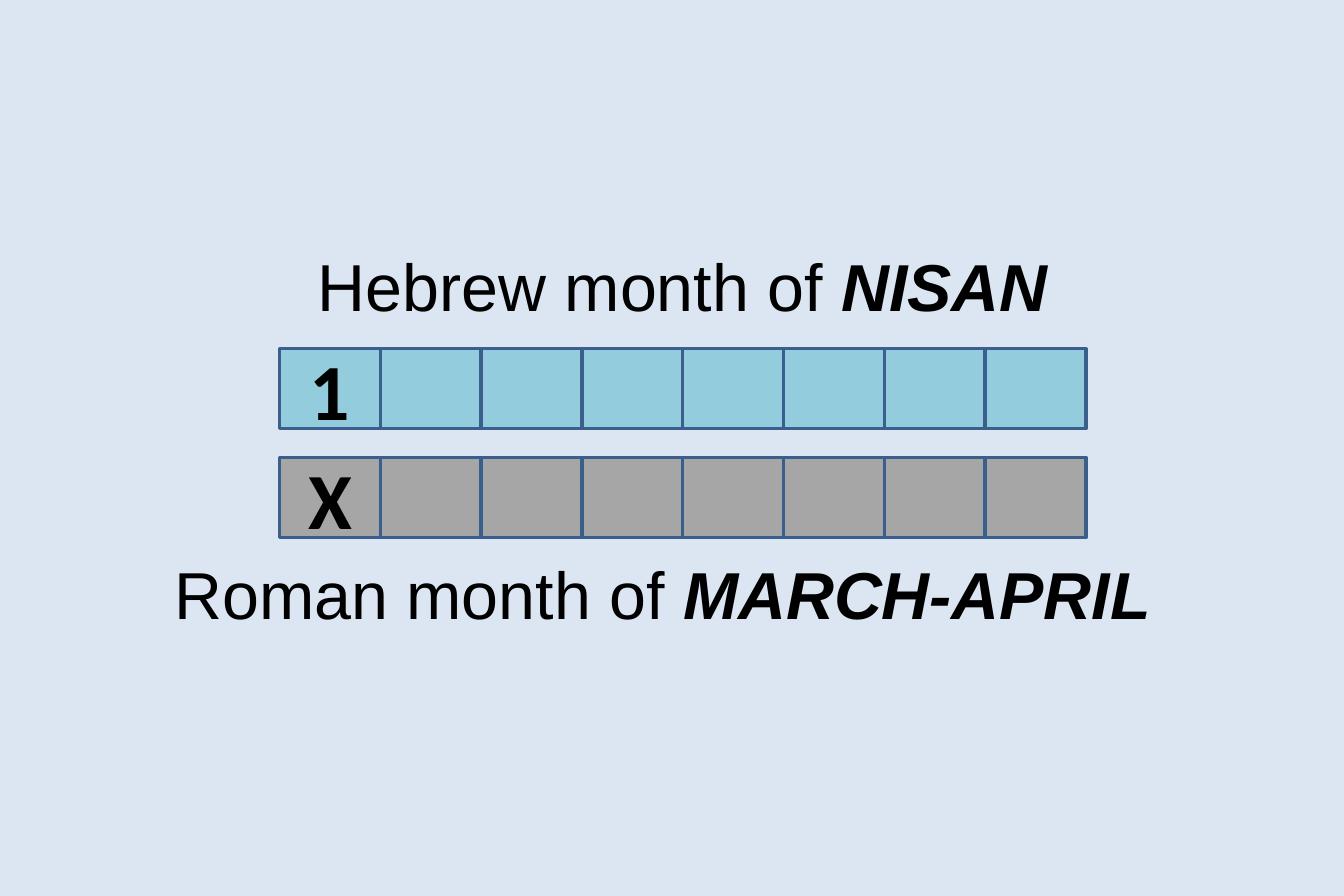
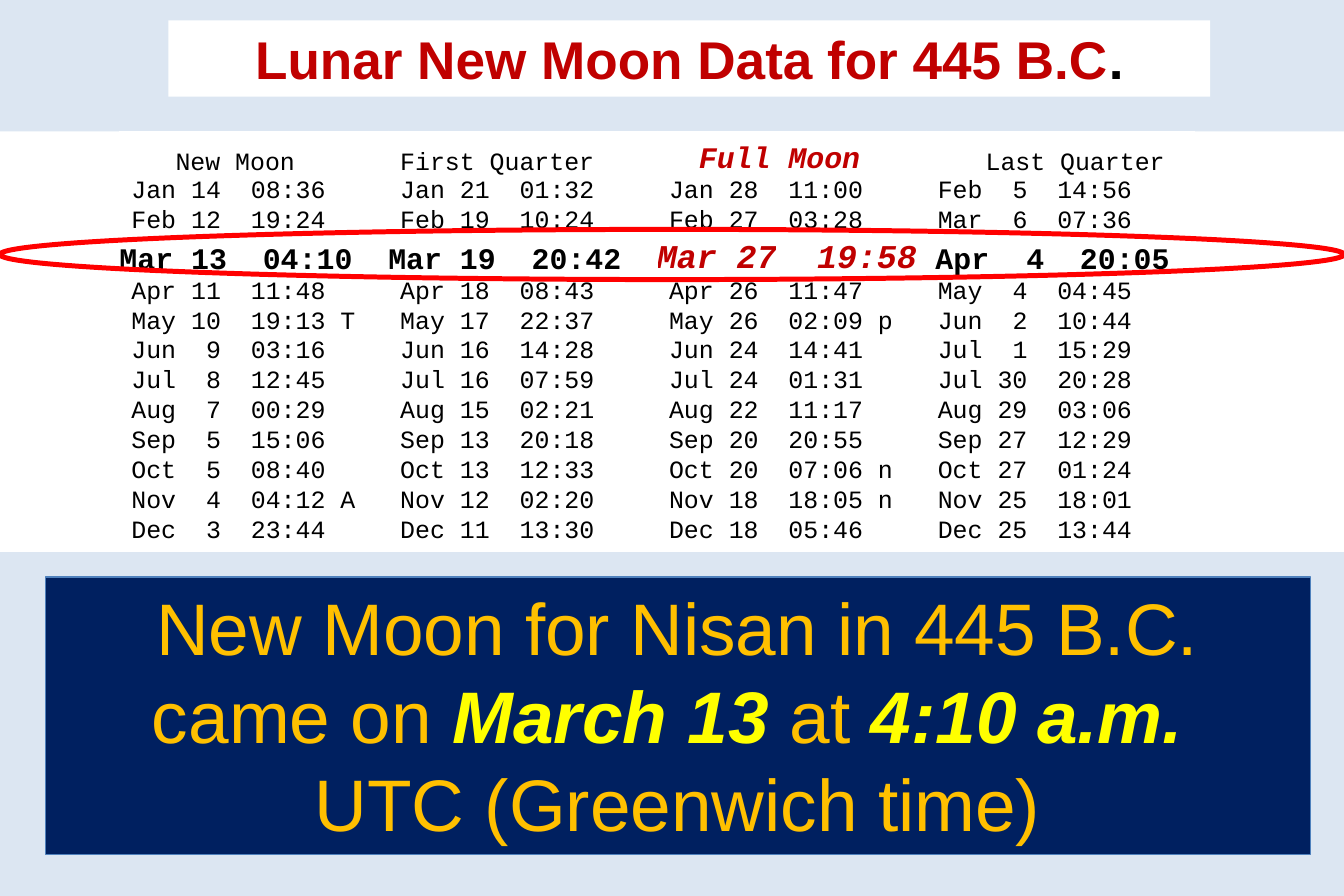
import pptx
import pptx.dml.color
import pptx.enum.shapes
import pptx.enum.text
import pptx.util

Inches = pptx.util.Inches
Pt = pptx.util.Pt
ALIGN = pptx.enum.text.PP_ALIGN
ANCHOR = pptx.enum.text.MSO_ANCHOR
SHAPE = pptx.enum.shapes.MSO_SHAPE

COLORS = {
    "background": "DCE6F2", "white": "FFFFFF", "black": "000000",
    "hebrew": "93CDDD", "roman": "A6A6A6", "day_line": "3A5F8C",
    "dark_red": "C00000", "red": "FF0000", "navy": "002060",
    "banner_line": "4F81BD", "gold": "FFC000", "yellow": "FFFF00",
}

# Run styles: size, font, colour, bold, italic
STYLES = {
    "day": (48, "Calibri", "black", True, False),
    "month": (40, "Arial", "black", False, False),
    "month_name": (40, "Arial", "black", True, True),
    "title": (32, "Arial", "dark_red", True, False),
    "title_stop": (32, "Arial", "black", True, False),
    "banner": (44, "Arial", "gold", False, False),
    "banner_key": (44, "Arial", "yellow", True, True),
    "data": (15, "Courier New", "black", False, False),
    "data_key": (18, "Courier New", "black", True, False),
    "full_head": (18, "Courier New", "dark_red", True, True),
    "full_key": (20, "Courier New", "dark_red", True, True),
}

# Slide 1 content: label box, label, first mark, fill and top of the day strip
MONTHS = [
    ((1.59, 2, 8.25, 0.77), [("Hebrew month of ", "month"), ("NISAN", "month_name")],
     "1", "hebrew", 2.92),
    ((0.84, 4.58, 9.56, 0.77), [("Roman month of ", "month"), ("MARCH-APRIL ", "month_name")],
     "X", "roman", 3.83),
]
DAY_COUNT, STRIP_LEFT, STRIP_WIDTH, DAY_HEIGHT = 8, 2.34, 6.75, 0.67

# Slide 2 content
TITLE = [[("Lunar New Moon Data for 445 B.C", "title"), (".", "title_stop")]]
BANNER = [
    [("New Moon for Nisan in 445 B.C. came on ", "banner"), ("March 13 ", "banner_key"),
     ("at ", "banner"), ("4:10 a.m. ", "banner_key")],
    [("UTC (Greenwich time)", "banner")],
]
# Phase heading, style, indent
PHASES = [
    ("New Moon", "data", 0.47), ("First Quarter", "data", 0.1),
    ("Full Moon", "full_head", 0.35), ("Last Quarter", "data", 0.5),
]
MOON_ROWS = [
    ("Jan 14 08:36", "Jan 21 01:32", "Jan 28 11:00", "Feb 5 14:56"),
    ("Feb 12 19:24", "Feb 19 10:24", "Feb 27 03:28", "Mar 6 07:36"),
    ("Mar 13 04:10", "Mar 19 20:42", "Mar 27 19:58", "Apr 4 20:05"),
    ("Apr 11 11:48", "Apr 18 08:43", "Apr 26 11:47", "May 4 04:45"),
    ("May 10 19:13 T", "May 17 22:37", "May 26 02:09 p", "Jun 2 10:44"),
    ("Jun 9 03:16", "Jun 16 14:28", "Jun 24 14:41", "Jul 1 15:29"),
    ("Jul 8 12:45", "Jul 16 07:59", "Jul 24 01:31", "Jul 30 20:28"),
    ("Aug 7 00:29", "Aug 15 02:21", "Aug 22 11:17", "Aug 29 03:06"),
    ("Sep 5 15:06", "Sep 13 20:18", "Sep 20 20:55", "Sep 27 12:29"),
    ("Oct 5 08:40", "Oct 13 12:33", "Oct 20 07:06 n", "Oct 27 01:24"),
    ("Nov 4 04:12 A", "Nov 12 02:20", "Nov 18 18:05 n", "Nov 25 18:01"),
    ("Dec 3 23:44", "Dec 11 13:30", "Dec 18 05:46", "Dec 25 13:44"),
]
KEY_ROW = 2
PART_WIDTHS = (0.55, 0.45, 1.25)  # month, day, time
# Indents of month (left), day (right) and time (left)
DATA_INDENTS = (0.1, 0.15, 0.1)
KEY_INDENTS = [(0, 0.1, 0.2), (0, 0.1, 0.2), (0, 0, 0.34), (0.08, 0.01, 0.29)]
HEAD_HEIGHT, ROW_HEIGHT, KEY_HEIGHT = 0.39, 0.25, 0.34


def rgb(name):
    return pptx.dml.color.RGBColor.from_string(COLORS[name])


def write(paragraph, runs, align):
    paragraph.alignment = align
    for text, style in runs:
        run = paragraph.add_run()
        run.text = text
        font = run.font
        size, font.name, color, font.bold, font.italic = STYLES[style]
        font.size = Pt(size)
        font.color.rgb = rgb(color)


def write_block(frame, paragraphs, anchor):
    frame.word_wrap = True
    frame.vertical_anchor = anchor
    for index, runs in enumerate(paragraphs):
        paragraph = frame.add_paragraph() if index else frame.paragraphs[0]
        write(paragraph, runs, ALIGN.CENTER)


def add_box(slide, box, fill=None, line=None, line_width=1.0, kind=SHAPE.RECTANGLE,
            paragraphs=(), anchor=ANCHOR.TOP):
    shape = slide.shapes.add_shape(kind, *map(Inches, box))
    shape.shadow.inherit = False
    if fill:
        shape.fill.solid()
        shape.fill.fore_color.rgb = rgb(fill)
    else:
        shape.fill.background()
    if line:
        shape.line.color.rgb = rgb(line)
        shape.line.width = Pt(line_width)
    else:
        shape.line.fill.background()
    write_block(shape.text_frame, paragraphs, anchor)


def fill_cell(cell, text, style, anchor, left=0, right=0, align=ALIGN.LEFT):
    cell.margin_left, cell.margin_right = Inches(left), Inches(right)
    cell.margin_top = cell.margin_bottom = 0
    cell.vertical_anchor = anchor
    cell.fill.solid()
    cell.fill.fore_color.rgb = rgb("white")
    write(cell.text_frame.paragraphs[0], [(text, style)], align)


def add_moon_table(slide, left, top):
    heights = [HEAD_HEIGHT] + [ROW_HEIGHT] * len(MOON_ROWS)
    heights[KEY_ROW + 1] = KEY_HEIGHT
    widths = PART_WIDTHS * len(PHASES)
    table = slide.shapes.add_table(
        len(heights), len(widths),
        *map(Inches, (left, top, sum(widths), sum(heights)))).table
    table.first_row = table.horz_banding = False
    for row, height in zip(table.rows, heights):
        row.height = Inches(height)
    for column, width in zip(table.columns, widths):
        column.width = Inches(width)

    # Phase headings span month, day and time
    for phase, (heading, style, indent) in enumerate(PHASES):
        first = phase * len(PART_WIDTHS)
        head = table.cell(0, first)
        head.merge(table.cell(0, first + len(PART_WIDTHS) - 1))
        fill_cell(head, heading, style, ANCHOR.BOTTOM, indent)

    # Dates and times
    for index, dates in enumerate(MOON_ROWS):
        is_key = index == KEY_ROW
        anchor = ANCHOR.BOTTOM if is_key else ANCHOR.TOP
        for phase, date in enumerate(dates):
            style = "data"
            if is_key:
                style = "full_key" if PHASES[phase][0] == "Full Moon" else "data_key"
            indents = KEY_INDENTS[phase] if is_key else DATA_INDENTS
            for part, text in enumerate(date.split(" ", 2)):
                cell = table.cell(index + 1, phase * len(PART_WIDTHS) + part)
                if part == 1:
                    fill_cell(cell, text, style, anchor, right=indents[part],
                              align=ALIGN.RIGHT)
                else:
                    fill_cell(cell, text, style, anchor, left=indents[part])


def build_months(slide):
    day_width = STRIP_WIDTH / DAY_COUNT
    for label_box, label, mark, fill, top in MONTHS:
        for day in range(DAY_COUNT):
            add_box(slide, (STRIP_LEFT + day * day_width, top, day_width, DAY_HEIGHT),
                    fill, "day_line", 2, anchor=ANCHOR.MIDDLE,
                    paragraphs=[] if day else [[(mark, "day")]])
        month_label = slide.shapes.add_textbox(*map(Inches, label_box))
        write_block(month_label.text_frame, [label], ANCHOR.TOP)


def build_moon_data(slide):
    add_box(slide, (0, 1.1, 11.25, 3.52), "white")
    add_moon_table(slide, 1, 1.1)
    add_box(slide, (1.41, 0.17, 8.72, 0.64), "white", paragraphs=TITLE)
    add_box(slide, (0.38, 4.83, 10.59, 2.32), "navy", "banner_line", 0.75,
            paragraphs=BANNER)
    # Ring around the Nisan row
    add_box(slide, (0, 1.92, 11.25, 0.42), line="red", line_width=3, kind=SHAPE.OVAL)


def main():
    prs = pptx.Presentation()
    prs.slide_width, prs.slide_height = Inches(11.25), Inches(7.5)
    background = prs.slide_master.background.fill
    background.solid()
    background.fore_color.rgb = rgb("background")
    for build in (build_months, build_moon_data):
        build(prs.slides.add_slide(prs.slide_layouts[6]))
    prs.save("out.pptx")


if __name__ == "__main__":
    main()
